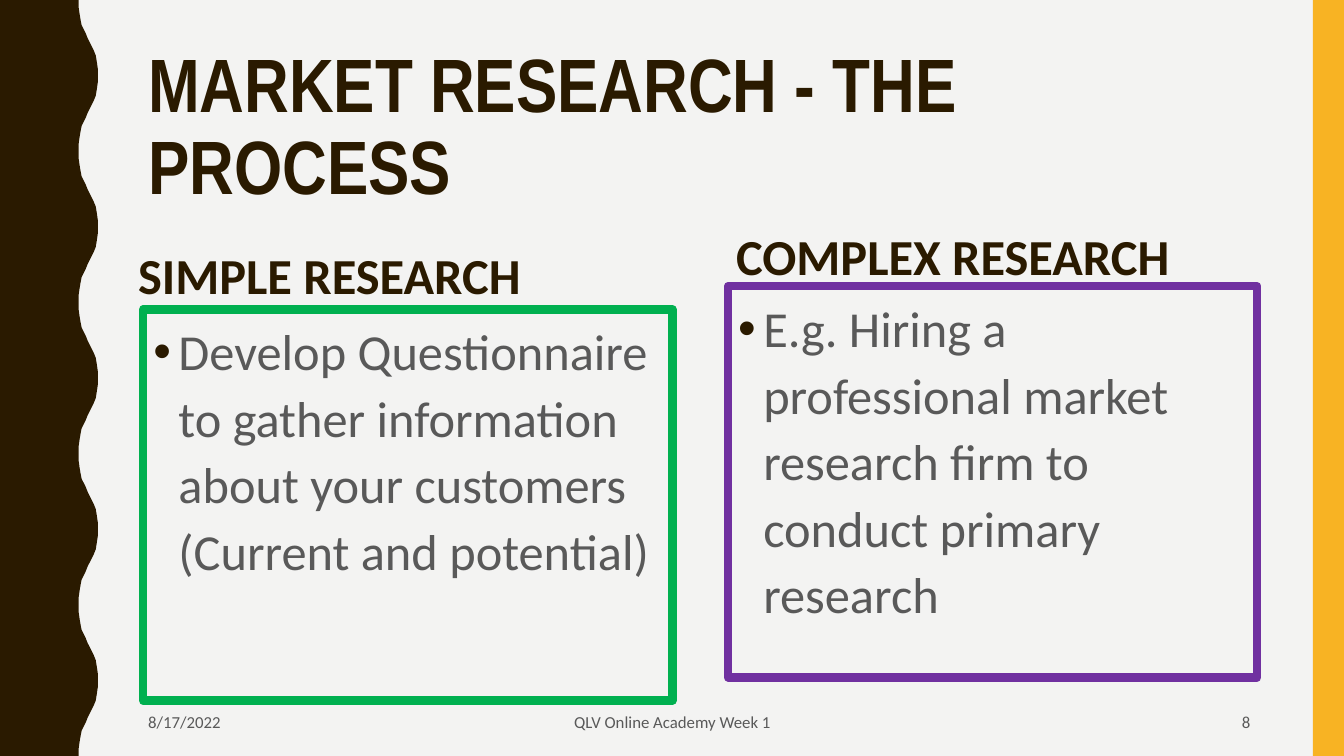
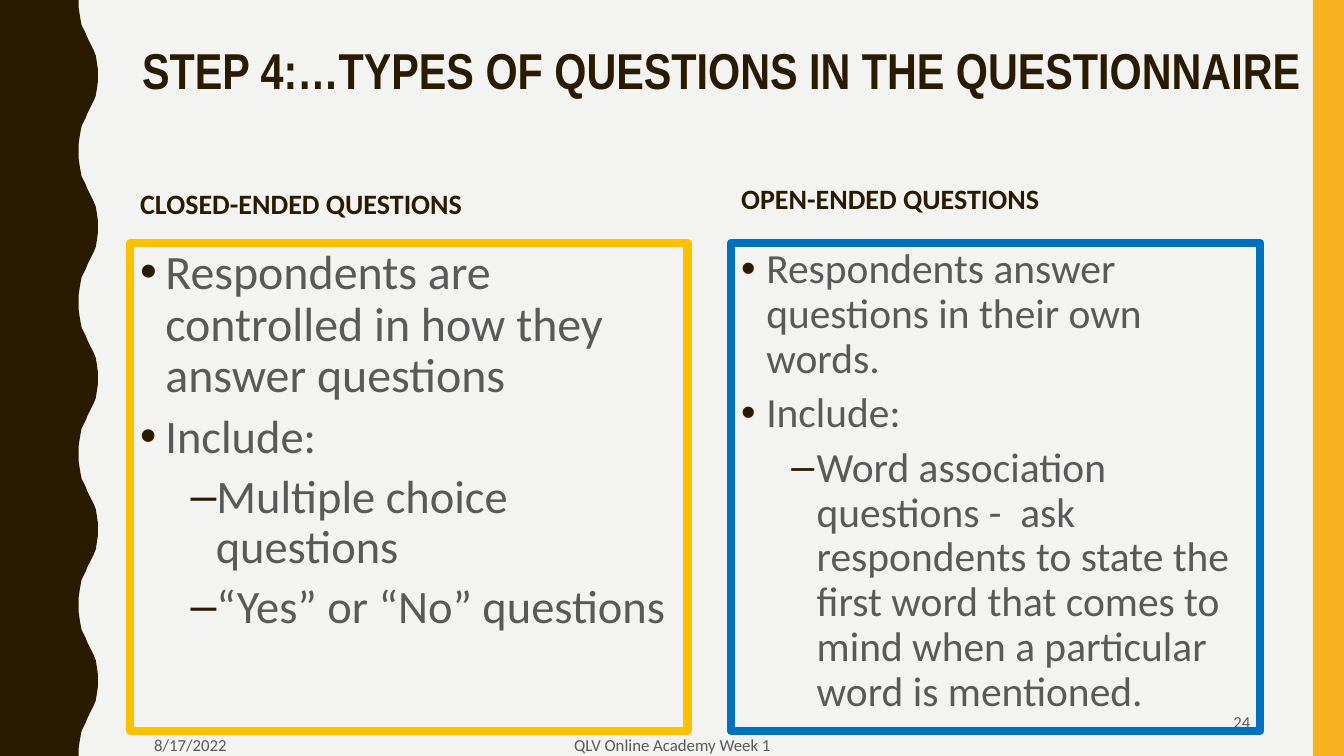
from lxml.etree import SubElement
from pptx import Presentation
from pptx.dml.color import RGBColor
from pptx.enum.shapes import MSO_SHAPE
from pptx.enum.text import MSO_ANCHOR, MSO_AUTO_SIZE, PP_ALIGN
from pptx.oxml.ns import qn
from pptx.util import Inches, Pt

BACKGROUND = RGBColor(0xF3, 0xF3, 0xF2)
BROWN = RGBColor(0x2A, 0x1A, 0x00)
GOLD = RGBColor(0xF8, 0xB3, 0x23)
GREY = RGBColor(0x59, 0x59, 0x59)
GREEN = RGBColor(0x00, 0xB0, 0x50)
PURPLE = RGBColor(0x70, 0x30, 0xA0)
AMBER = RGBColor(0xFF, 0xC0, 0x00)
BLUE = RGBColor(0x00, 0x70, 0xC0)

# Left edge wave in hundredths of an inch: half a period, then mirrored
HALF_WAVE = [(78, 0), (78, 7), (79, 14), (80, 20), (81, 25), (83, 29),
             (85, 33), (87, 38), (89, 42), (91, 46), (93, 50), (95, 55),
             (96, 61), (97, 68), (97, 75)]
PERIOD = 150
WAVE = HALF_WAVE + [(x, PERIOD - y) for x, y in reversed(HALF_WAVE[:-1])]

# Each column: heading, its box, its size, frame colour, frame box, line spacing,
# then bullets as (level, size, text)
SLIDES = [
    dict(title="MARKET RESEARCH - THE PROCESS", title_size=54,
         title_box=(1.37, 0.42, 11.12, 1.08),
         columns=[
             ("SIMPLE RESEARCH", (1.27, 1.61, 5.25, 1.46), 36,
              GREEN, (1.42, 3.07, 5.25, 3.88), 1.1,
              [(0, 36, "Develop Questionnaire to gather information about "
                       "your customers (Current and potential)")]),
             ("COMPLEX RESEARCH", (7.2, 1.61, 5.25, 1.27), 36,
              PURPLE, (7.22, 2.84, 5.25, 3.88), 1.1,
              [(0, 36, "E.g. Hiring a professional market research firm to "
                       "conduct primary research")]),
         ],
         date_at=(1.37, 6.97), footer_top=6.97, number="8"),
    dict(title="STEP 4:…TYPES OF QUESTIONS IN THE QUESTIONNAIRE", title_size=36,
         title_box=(1.31, 0.41, 11.89, 0.86),
         columns=[
             ("CLOSED-ENDED QUESTIONS", (1.29, 1.37, 5.25, 0.86), 20,
              AMBER, (1.29, 2.41, 5.53, 4.84), 0.9,
              [(0, 34.2, "Respondents are controlled in how they answer questions"),
               (0, 33.2, "Include:"),
               (1, 33.2, "Multiple choice questions"),
               (1, 33.2, "“Yes” or “No” questions")]),
             ("OPEN-ENDED QUESTIONS", (7.25, 1.49, 5.25, 0.69), 20,
              BLUE, (7.25, 2.41, 5.25, 4.84), 0.9,
              [(0, 29.6, "Respondents answer questions in their own words."),
               (0, 29.6, "Include:"),
               (1, 29.6, "Word association questions -  ask respondents to state "
                         "the first word that comes to mind when a particular "
                         "word is mentioned.")]),
         ],
         date_at=(1.43, 7.2), footer_top=7.2, number="24"),
]


def place(sp, box, anchor):
    """Move a text shape to its box and fix how its text sits."""
    sp.left, sp.top, sp.width, sp.height = [Inches(v) for v in box]
    tf = sp.text_frame
    tf.word_wrap = True
    tf.auto_size = MSO_AUTO_SIZE.NONE
    tf.vertical_anchor = anchor
    return tf


def style(p, size, color, font="Calibri", bold=False, align=PP_ALIGN.LEFT,
          spacing=1.0, before=0):
    """Format a paragraph and its runs."""
    p.alignment = align
    p.line_spacing = spacing
    p.space_before = Pt(before)
    for r in p.runs:
        r.font.name = font
        r.font.size = Pt(size)
        r.font.bold = bold
        r.font.color.rgb = color


prs = Presentation()
prs.slide_width, prs.slide_height = Inches(13.33), Inches(7.5)
layout = prs.slide_layouts.get_by_name("Comparison")
layout.background.fill.solid()
layout.background.fill.fore_color.rgb = BACKGROUND
slides = [prs.slides.add_slide(layout) for _ in SLIDES]

# Shared side bands: drawn once, then moved to the layout
shapes = slides[0].shapes
outline = [(x, y + k * PERIOD) for k in range(5) for x, y in WAVE]
builder = shapes.build_freeform(0, 0, scale=Inches(0.01))
builder.add_line_segments(outline + [(0, 5 * PERIOD)], close=True)
wave = builder.convert_to_shape()
band = shapes.add_shape(MSO_SHAPE.RECTANGLE, Inches(13.02), 0,
                        Inches(0.31), Inches(7.5))
for sp, color in ((band, GOLD), (wave, BROWN)):
    sp.shadow.inherit = False
    sp.fill.solid()
    sp.fill.fore_color.rgb = color
    sp.line.fill.background()
    layout.shapes._spTree.insert(2, sp._element)

for s, content in zip(slides, SLIDES):
    # Title
    tf = place(s.shapes.title, content["title_box"], MSO_ANCHOR.TOP)
    tf.text = content["title"]
    style(tf.paragraphs[0], content["title_size"], BROWN, "Arial Narrow",
          bold=True, spacing=0.9)

    # Two columns: heading above a framed list
    for i, column in enumerate(content["columns"]):
        heading, heading_box, size, color, frame_box, spacing, bullets = column
        tf = place(s.placeholders[1 + 2 * i], heading_box, MSO_ANCHOR.BOTTOM)
        tf.text = heading
        style(tf.paragraphs[0], size, BROWN, bold=True)

        frame = s.placeholders[2 + 2 * i]
        frame.line.color.rgb = color
        frame.line.width = Pt(6)
        tf = place(frame, frame_box, MSO_ANCHOR.TOP)
        tf.text = "\n".join(text for _, _, text in bullets)
        for n, (p, (level, size, _)) in enumerate(zip(tf.paragraphs, bullets)):
            p.level = level
            style(p, size, GREY, spacing=spacing, before=7 if n else 0)
            pPr = p._p.get_or_add_pPr()
            pPr.set("marL", str(Inches(0.25 + 0.5 * level)))
            pPr.set("indent", str(Inches(-0.25)))
            bullet_color = SubElement(pPr, qn("a:buClr"))
            SubElement(bullet_color, qn("a:srgbClr"), val=str(BROWN))
            SubElement(pPr, qn("a:buFont"), typeface="Arial")
            SubElement(pPr, qn("a:buChar"), char="•–"[level])

    # Date, footer and slide number
    footers = [
        ("8/17/2022", (*content["date_at"], 2.55, 0.38), PP_ALIGN.LEFT),
        ("QLV Online Academy Week 1", (4.42, content["footer_top"], 4.5, 0.38),
         PP_ALIGN.CENTER),
        (content["number"], (9.42, 6.97, 3.08, 0.38), PP_ALIGN.RIGHT),
    ]
    for text, box, align in footers:
        tf = place(s.shapes.add_textbox(0, 0, 0, 0), box, MSO_ANCHOR.MIDDLE)
        tf.text = text
        style(tf.paragraphs[0], 12, GREY, align=align)

prs.save("out.pptx")
